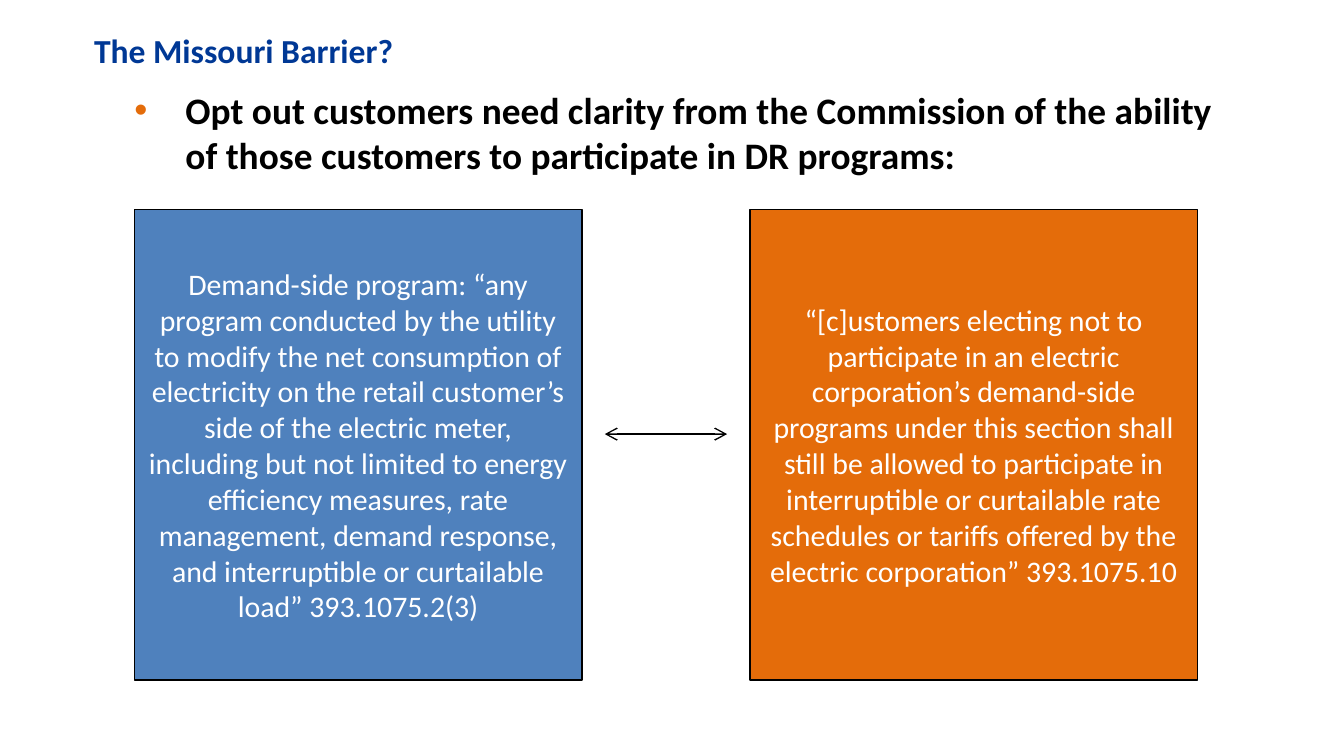
from lxml.etree import SubElement
from pptx import Presentation
from pptx.dml.color import RGBColor
from pptx.enum.shapes import MSO_CONNECTOR, MSO_SHAPE
from pptx.enum.text import MSO_ANCHOR, PP_ALIGN
from pptx.oxml.ns import qn
from pptx.util import Inches, Pt

NAVY = RGBColor(0x00, 0x38, 0x95)
BLUE = RGBColor(0x4F, 0x81, 0xBD)
ORANGE = RGBColor(0xE4, 0x6C, 0x0A)
BLACK = RGBColor(0, 0, 0)
WHITE = RGBColor(0xFF, 0xFF, 0xFF)

FONT = "Calibri"
SLIDE_WIDTH = 10
SLIDE_HEIGHT = SLIDE_WIDTH * 9 / 16
COLUMN_LEFT, COLUMN_WIDTH, COLUMN_GAP = 1, 3.33, 1.25
PANEL_TOP, PANEL_HEIGHT = 1.56, 3.5
ARROW_Y, ARROW_MARGIN = 3.23, 0.17
BULLET_INDENT = 0.38

TITLE = "The Missouri Barrier?"
MESSAGE = (
    "Opt out customers need clarity from the Commission of the ability "
    "of those customers to participate in DR programs:"
)
PANELS = [
    (
        "Demand-side program: “any program conducted by the utility to modify "
        "the net consumption of electricity on the retail customer’s side of "
        "the electric meter, including but not limited to energy efficiency "
        "measures, rate management, demand response, and interruptible or "
        "curtailable load” 393.1075.2(3)",
        BLUE,
    ),
    (
        "“[c]ustomers electing not to participate in an electric corporation’s "
        "demand-side programs under this section shall still be allowed to "
        "participate in interruptible or curtailable rate schedules or tariffs "
        "offered by the electric corporation” 393.1075.10",
        ORANGE,
    ),
]


def column_left(column):
    return COLUMN_LEFT + column * (COLUMN_WIDTH + COLUMN_GAP)


def format_text(run, size, color, bold=False):
    font = run.font
    font.name = FONT
    font.size = Pt(size)
    font.bold = bold
    font.color.rgb = color


def add_text(slide, box, text, size, color):
    shape = slide.shapes.add_textbox(*map(Inches, box))
    text_frame = shape.text_frame
    text_frame.word_wrap = True
    text_frame.margin_left = text_frame.margin_right = 0
    text_frame.margin_top = text_frame.margin_bottom = 0
    text_frame.text = text
    paragraph = text_frame.paragraphs[0]
    format_text(paragraph.runs[0], size, color, bold=True)
    return paragraph


def add_bullet(paragraph, color):
    properties = paragraph._p.get_or_add_pPr()
    properties.set("marL", str(Inches(BULLET_INDENT)))
    properties.set("indent", str(-Inches(BULLET_INDENT)))
    bullet_color = SubElement(properties, qn("a:buClr"))
    SubElement(bullet_color, qn("a:srgbClr"), val=str(color))
    SubElement(properties, qn("a:buFont"), typeface="Arial")
    SubElement(properties, qn("a:buChar"), char="•")


def add_panel(slide, column, text, color):
    box = (column_left(column), PANEL_TOP, COLUMN_WIDTH, PANEL_HEIGHT)
    shape = slide.shapes.add_shape(MSO_SHAPE.RECTANGLE, *map(Inches, box))
    shape.shadow.inherit = False
    shape.fill.solid()
    shape.fill.fore_color.rgb = color
    shape.line.color.rgb = BLACK
    shape.line.width = Pt(0.75)
    text_frame = shape.text_frame
    text_frame.word_wrap = True
    text_frame.vertical_anchor = MSO_ANCHOR.MIDDLE
    text_frame.text = text
    paragraph = text_frame.paragraphs[0]
    paragraph.alignment = PP_ALIGN.CENTER
    format_text(paragraph.runs[0], 16, WHITE)


def add_double_arrow(slide):
    start = column_left(0) + COLUMN_WIDTH + ARROW_MARGIN
    end = column_left(1) - ARROW_MARGIN
    connector = slide.shapes.add_connector(
        MSO_CONNECTOR.STRAIGHT, *map(Inches, (start, ARROW_Y, end, ARROW_Y))
    )
    connector.line.color.rgb = BLACK
    connector.line.width = Pt(0.75)
    line = connector.line._get_or_add_ln()
    for end_tag in ("a:headEnd", "a:tailEnd"):
        SubElement(line, qn(end_tag), type="arrow")
    SubElement(connector._element.spPr, qn("a:effectLst"))


def main():
    presentation = Presentation()
    presentation.slide_width = Inches(SLIDE_WIDTH)
    presentation.slide_height = Inches(SLIDE_HEIGHT)
    slide = presentation.slides.add_slide(presentation.slide_layouts[6])

    add_text(slide, (0.7, 0.22, 8.6, 0.3), TITLE, 18, NAVY)
    message = add_text(slide, (COLUMN_LEFT, 0.65, 8.03, 1.01), MESSAGE, 20, BLACK)
    add_bullet(message, ORANGE)
    for column, (text, color) in enumerate(PANELS):
        add_panel(slide, column, text, color)
    add_double_arrow(slide)

    presentation.save("out.pptx")


if __name__ == "__main__":
    main()
